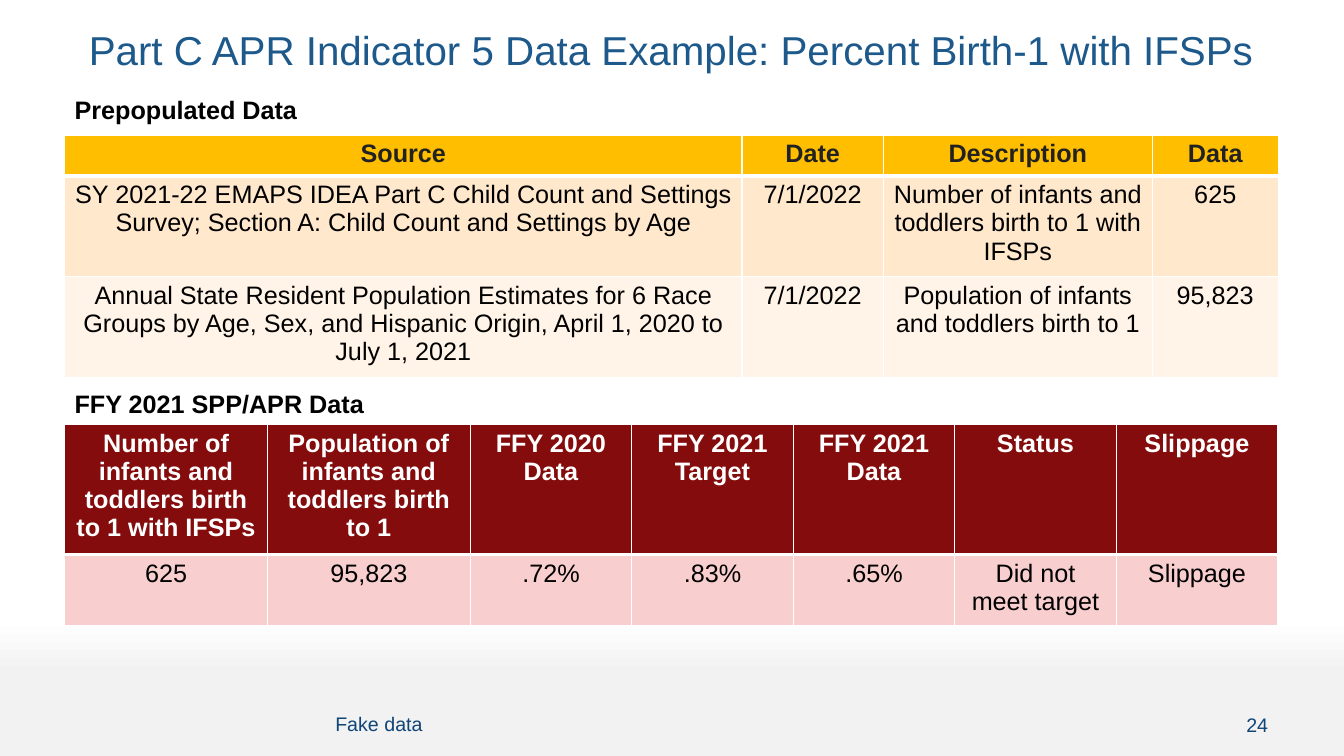
from dataclasses import dataclass

from lxml import etree
from pptx import Presentation
from pptx.dml.color import RGBColor
from pptx.enum.text import MSO_ANCHOR, MSO_AUTO_SIZE, PP_ALIGN
from pptx.oxml.ns import qn
from pptx.slide import Slide
from pptx.table import _Cell
from pptx.text.text import TextFrame
from pptx.util import Cm, Pt

LEFT, CENTER, RIGHT = PP_ALIGN.LEFT, PP_ALIGN.CENTER, PP_ALIGN.RIGHT
TOP, MIDDLE = MSO_ANCHOR.TOP, MSO_ANCHOR.MIDDLE
NO_AUTOFIT = MSO_AUTO_SIZE.NONE

WHITE = RGBColor(0xFF, 0xFF, 0xFF)
BLACK = RGBColor(0x00, 0x00, 0x00)
CHARCOAL = RGBColor(0x22, 0x22, 0x22)
PALE_GRAY = RGBColor(0xF2, 0xF2, 0xF2)
TITLE_BLUE = RGBColor(0x1D, 0x59, 0x8B)
FOOTER_BLUE = RGBColor(0x10, 0x45, 0x78)
GOLD = RGBColor(0xFF, 0xBE, 0x00)
PEACH = RGBColor(0xFF, 0xE8, 0xCC)
CREAM = RGBColor(0xFF, 0xF4, 0xE7)
MAROON = RGBColor(0x84, 0x0C, 0x0C)
PINK = RGBColor(0xF8, 0xCE, 0xCE)

FONT = "Arial"
MARGIN = 1.63
CONTENT_WIDTH = 30.58


@dataclass(frozen=True)
class Label:
    text: str
    left: float
    top: float
    width: float
    height: float
    size: float = 18
    color: RGBColor = BLACK
    bold: bool = False
    align: PP_ALIGN = LEFT
    anchor: MSO_ANCHOR = TOP


@dataclass(frozen=True)
class DataTable:
    top: float
    columns: list[float]
    row_heights: list[float]
    row_fills: list[RGBColor]
    header_color: RGBColor
    rows: list[list[str]]


LABELS = [
    Label("Prepopulated Data", MARGIN, 2.26, 9.78, 1.02, bold=True),
    Label("FFY 2021 SPP/APR Data", MARGIN, 9.65, 9.78, 1.02, bold=True),
    Label("Fake data", 8.2, 17.55, 20.57, 1.37, size=14, color=FOOTER_BLUE, anchor=MIDDLE),
    Label("24", 28.78, 17.55, 3.43, 1.4, size=14, color=FOOTER_BLUE, align=RIGHT, anchor=MIDDLE),
]

TABLES = [
    DataTable(
        top=3.4,
        columns=[17.07, 3.56, 6.78, 3.17],
        row_heights=[1.03, 2.54, 2.54],
        row_fills=[GOLD, PEACH, CREAM],
        header_color=CHARCOAL,
        rows=[
            ["Source", "Date", "Description", "Data"],
            ["SY 2021-22 EMAPS IDEA Part C Child Count and Settings Survey; "
             "Section A: Child Count and Settings by Age",
             "7/1/2022", "Number of infants and toddlers birth to 1 with IFSPs", "625"],
            ["Annual State Resident Population Estimates for 6 Race Groups by Age, Sex, "
             "and Hispanic Origin, April 1, 2020 to July 1, 2021",
             "7/1/2022", "Population of infants and toddlers birth to 1", "95,823"],
        ],
    ),
    DataTable(
        top=10.69,
        columns=[5.11] * 2 + [4.07] * 5,
        row_heights=[3.28, 1.79],
        row_fills=[MAROON, PINK],
        header_color=WHITE,
        rows=[
            ["Number of infants and toddlers birth to 1 with IFSPs",
             "Population of infants and toddlers birth to 1",
             "FFY 2020 Data", "FFY 2021 Target", "FFY 2021 Data", "Status", "Slippage"],
            ["625", "95,823", ".72%", ".83%", ".65%", "Did not meet target", "Slippage"],
        ],
    ),
]


def write_text(frame: TextFrame, text: str, *, size: float = 18, color: RGBColor = BLACK,
               bold: bool = False, align: PP_ALIGN = LEFT, line_spacing: float = 1.0) -> None:
    paragraph = frame.paragraphs[0]
    paragraph.alignment = align
    paragraph.line_spacing = line_spacing
    run = paragraph.add_run()
    run.text = text
    run.font.name = FONT
    run.font.size = Pt(size)
    run.font.bold = bold
    run.font.color.rgb = color


def set_background(slide: Slide) -> None:
    fill = slide.background.fill
    fill.gradient()
    fill.gradient_angle = 270
    for stop, position, color in zip(fill.gradient_stops, (0.82, 0.89), (WHITE, PALE_GRAY)):
        stop.position = position
        stop.color.rgb = color


def add_title(slide: Slide, text: str) -> None:
    title = slide.shapes.title
    title.left, title.top = Cm(MARGIN), Cm(0.64)
    title.width, title.height = Cm(CONTENT_WIDTH), Cm(2.54)
    frame = title.text_frame
    frame.auto_size = NO_AUTOFIT
    frame.vertical_anchor = TOP
    write_text(frame, text, size=28.8, color=TITLE_BLUE, align=CENTER, line_spacing=0.9)


def add_label(slide: Slide, label: Label) -> None:
    box = slide.shapes.add_textbox(
        Cm(label.left), Cm(label.top), Cm(label.width), Cm(label.height))
    frame = box.text_frame
    frame.word_wrap = True
    frame.vertical_anchor = label.anchor
    write_text(frame, label.text, size=label.size, color=label.color,
               bold=label.bold, align=label.align)


def set_borders(cell: _Cell, widths: dict[str, float]) -> None:
    """Draw white borders; widths maps L, R, T and B, in that order, to points."""
    properties = cell._tc.get_or_add_tcPr()
    for side, width in widths.items():
        line = etree.SubElement(properties, qn(f"a:ln{side}"), w=str(Pt(width)))
        solid = etree.SubElement(line, qn("a:solidFill"))
        etree.SubElement(solid, qn("a:srgbClr"), val=str(WHITE))


def add_data_table(slide: Slide, data: DataTable) -> None:
    table = slide.shapes.add_table(
        len(data.rows), len(data.columns), Cm(MARGIN), Cm(data.top),
        Cm(CONTENT_WIDTH), Cm(sum(data.row_heights))).table
    table.horz_banding = False
    for column, width in zip(table.columns, data.columns):
        column.width = Cm(width)
    for index, (row, height, fill, texts) in enumerate(
            zip(table.rows, data.row_heights, data.row_fills, data.rows)):
        row.height = Cm(height)
        is_header = index == 0
        for cell, text in zip(row.cells, texts):
            set_borders(cell, {"L": 1, "R": 1, "T": 3 if index == 1 else 1,
                               "B": 3 if is_header else 1})
            cell.fill.solid()
            cell.fill.fore_color.rgb = fill
            write_text(cell.text_frame, text, bold=is_header, align=CENTER,
                       color=data.header_color if is_header else BLACK)


def main() -> None:
    presentation = Presentation()
    presentation.slide_width, presentation.slide_height = Cm(33.87), Cm(19.05)
    title_only = presentation.slide_layouts[5]
    slide = presentation.slides.add_slide(title_only)
    set_background(slide)
    add_title(slide, "Part C APR Indicator 5 Data Example: Percent Birth-1 with IFSPs")
    for data in TABLES:
        add_data_table(slide, data)
    for label in LABELS:
        add_label(slide, label)
    presentation.save("out.pptx")


if __name__ == "__main__":
    main()
